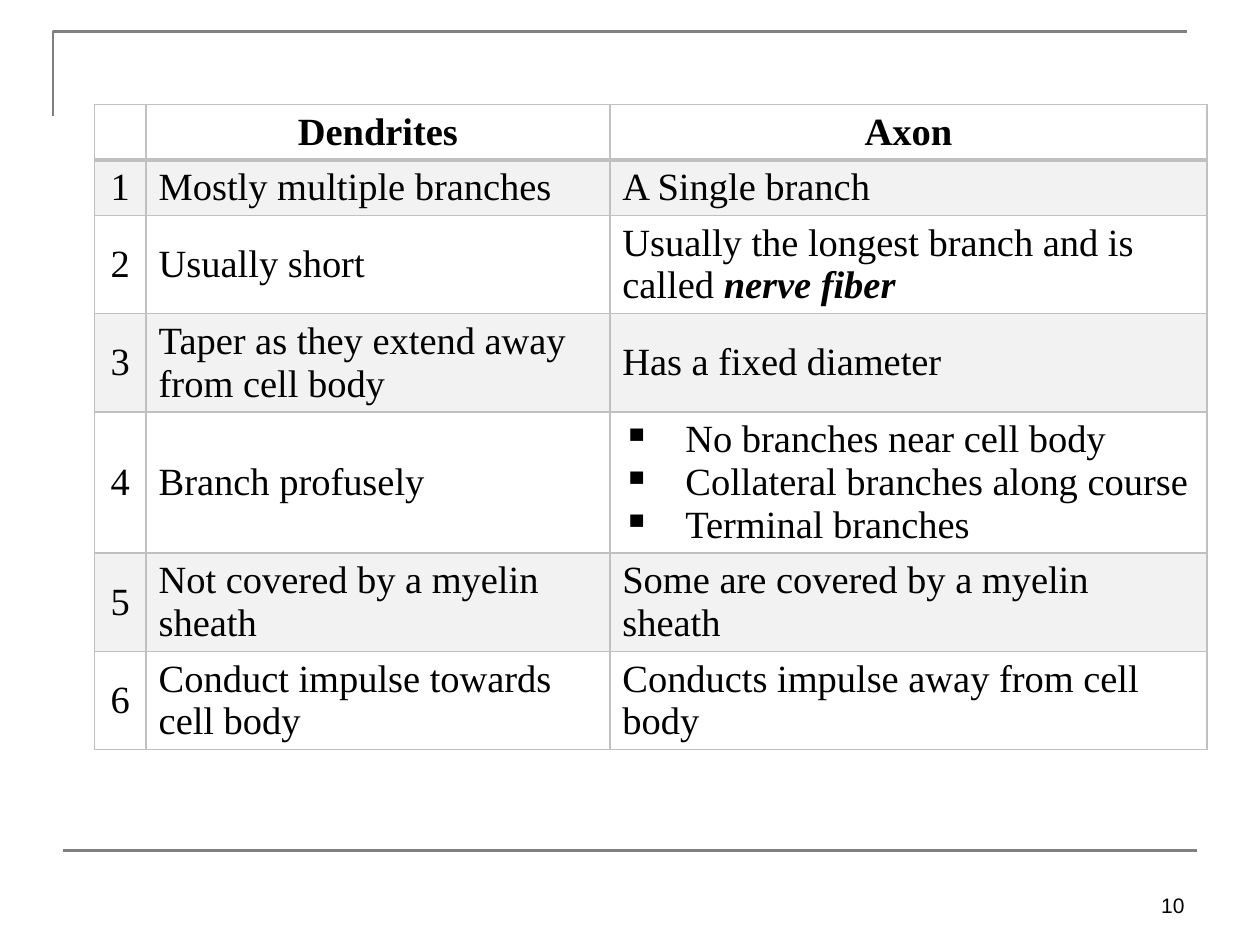
from lxml.etree import SubElement
from pptx import Presentation
from pptx.dml.color import RGBColor
from pptx.enum.shapes import MSO_CONNECTOR
from pptx.enum.text import MSO_ANCHOR, PP_ALIGN
from pptx.oxml.ns import qn
from pptx.util import Inches, Pt

BLACK = RGBColor(0x00, 0x00, 0x00)
RULE_GRAY = RGBColor(0x80, 0x80, 0x80)
BORDER_GRAY = RGBColor(0xC0, 0xC0, 0xC0)
BAND_GRAY = RGBColor(0xF2, 0xF2, 0xF2)

COLUMN_WIDTHS = [0.41, 3.68, 4.74]
LINE_HEIGHT = 0.34
CELL_PADDING = 0.1

# Each row: left text, right lines, most lines in the row
ROWS = [
    ("Dendrites", ["Axon"], 1),
    ("Mostly multiple branches", ["A Single branch"], 1),
    ("Usually short", ["Usually the longest branch and is called "], 2),
    ("Taper as they extend away from cell body", ["Has a fixed diameter"], 2),
    ("Branch profusely", ["No branches near cell body",
                          "Collateral branches along course",
                          "Terminal branches"], 3),
    ("Not covered by a myelin sheath", ["Some are covered by a myelin sheath"], 2),
    ("Conduct impulse towards cell body", ["Conducts impulse away from cell body"], 2),
]


def add_span(para, text, size=22, font="Times New Roman", bold=False, italic=False):
    span = para.add_run()
    span.text = text
    span.font.name = font
    span.font.size = Pt(size)
    span.font.bold = bold
    span.font.italic = italic
    span.font.color.rgb = BLACK


def set_borders(cell, bottom_width, top_width):
    props = cell._tc.get_or_add_tcPr()
    widths = {"L": 1, "R": 1, "T": top_width, "B": bottom_width}
    for side, width in widths.items():
        line = SubElement(props, qn(f"a:ln{side}"), w=str(Pt(width)))
        fill = SubElement(line, qn("a:solidFill"))
        SubElement(fill, qn("a:srgbClr"), val=str(BORDER_GRAY))


deck = Presentation()
deck.slide_width = Inches(10)
deck.slide_height = Inches(7.5)
page = deck.slides.add_slide(deck.slide_layouts[6])

# Corner rule and footer rule
builder = page.shapes.build_freeform(Inches(0.42), Inches(0.92))
builder.add_line_segments(
    [(Inches(0.42), Inches(0.25)), (Inches(9.42), Inches(0.25))], close=False)
corner_rule = builder.convert_to_shape()
corner_rule.shadow.inherit = False
corner_rule.fill.background()
footer_rule = page.shapes.add_connector(
    MSO_CONNECTOR.STRAIGHT, Inches(0.5), Inches(6.75), Inches(9.5), Inches(6.75))
SubElement(footer_rule._element.spPr, qn("a:effectLst"))
for rule in (corner_rule, footer_rule):
    rule.line.color.rgb = RULE_GRAY
    rule.line.width = Pt(1.5)

# Comparison table
heights = [lines * LINE_HEIGHT + CELL_PADDING for _, _, lines in ROWS]
table = page.shapes.add_table(
    len(ROWS), len(COLUMN_WIDTHS), Inches(0.75), Inches(0.83),
    Inches(sum(COLUMN_WIDTHS)), Inches(sum(heights))).table
table.first_row = False
table.horz_banding = False
for column, width in zip(table.columns, COLUMN_WIDTHS):
    column.width = Inches(width)

for number, (dendrite, axon, _) in enumerate(ROWS):
    table.rows[number].height = Inches(heights[number])
    is_header = number == 0
    texts = [[] if is_header else [str(number)], [dendrite], axon]
    for column, lines in enumerate(texts):
        cell = table.cell(number, column)
        cell.vertical_anchor = MSO_ANCHOR.MIDDLE
        set_borders(cell, 2 if is_header else 1, 2 if number == 1 else 1)
        if number % 2:
            cell.fill.solid()
            cell.fill.fore_color.rgb = BAND_GRAY
        else:
            cell.fill.background()

        frame = cell.text_frame
        for index, text in enumerate(lines):
            para = frame.add_paragraph() if index else frame.paragraphs[0]
            if is_header or column == 0:
                para.alignment = PP_ALIGN.CENTER
            if len(lines) > 1:
                para.alignment = PP_ALIGN.JUSTIFY
                props = para._p.get_or_add_pPr()
                props.set("marL", str(Inches(0.5)))
                props.set("indent", str(-Inches(0.5)))
                SubElement(props, qn("a:buChar"), char="▪")
            add_span(para, text, bold=is_header)

fiber_para = table.cell(2, 2).text_frame.paragraphs[0]
add_span(fiber_para, "nerve fiber", bold=True, italic=True)

# Page number
number_box = page.shapes.add_textbox(Inches(7.17), Inches(6.83), Inches(2.33), Inches(0.5))
number_box.text_frame.word_wrap = True
number_box.text_frame.vertical_anchor = MSO_ANCHOR.BOTTOM
number_para = number_box.text_frame.paragraphs[0]
number_para.alignment = PP_ALIGN.RIGHT
add_span(number_para, "10", size=12, font="Arial")

deck.save("out.pptx")
